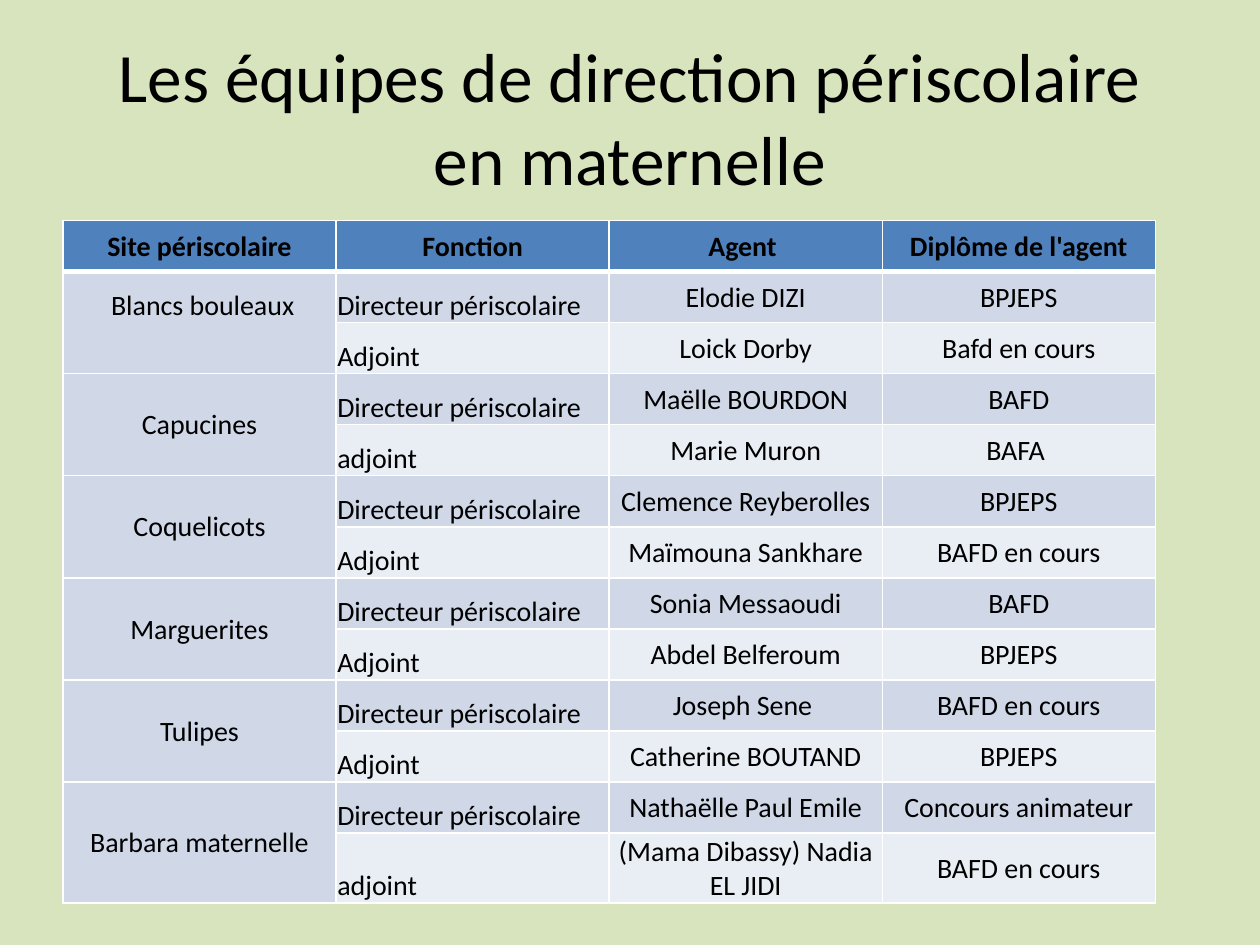
from pptx import Presentation
from pptx.util import Inches, Pt
from pptx.dml.color import RGBColor as RGB
from pptx.enum.text import PP_ALIGN as AL, MSO_ANCHOR as ANC
from pptx.oxml.ns import qn
from lxml.etree import SubElement as Sub

HUES = {"back": "D7E4BD", "head": "4F81BD", "odd": "D0D8E8",
        "even": "E9EDF4", "line": "FFFFFF", "text": "000000"}
HEADS = ["Site périscolaire", "Fonction", "Agent ", "Diplôme de l'agent"]
BOSS = "Directeur périscolaire"
TEAMS = [
    (" Blancs bouleaux", "Elodie DIZI", "BPJEPS",
     "Adjoint", "Loick Dorby", "Bafd en cours"),
    ("Capucines", "Maëlle BOURDON", "BAFD",
     "adjoint", "Marie Muron", "BAFA "),
    ("Coquelicots", "Clemence Reyberolles", "BPJEPS",
     "Adjoint", "Maïmouna Sankhare", "BAFD en cours"),
    ("Marguerites", "Sonia Messaoudi", "BAFD",
     "Adjoint", "Abdel Belferoum", "BPJEPS"),
    ("Tulipes", "Joseph Sene ", "BAFD en cours",
     "Adjoint", "Catherine BOUTAND", "BPJEPS"),
    ("Barbara maternelle", "Nathaëlle Paul Emile", "Concours animateur",
     "adjoint", "(Mama Dibassy) Nadia EL JIDI", "BAFD en cours"),
]


def write(frame, text, size, bold=False, align=AL.CENTER):
    para = frame.paragraphs[0]
    para.alignment = align
    run = para.add_run()
    run.text = text
    run.font.name = "Calibri"
    run.font.size = Pt(size)
    run.font.bold = bold
    run.font.color.rgb = RGB.from_string(HUES["text"])


def paint(cell, hue, row):
    props = cell._tc.get_or_add_tcPr()
    for side in "LRTB":
        thick = (row, side) in [(0, "B"), (1, "T")]
        line = Sub(props, qn("a:ln" + side), w=str(Pt(3 if thick else 1)))
        Sub(Sub(line, qn("a:solidFill")), qn("a:srgbClr"), val=HUES["line"])
    cell.fill.solid()
    cell.fill.fore_color.rgb = RGB.from_string(HUES[hue])


deck = Presentation()
deck.slide_width, deck.slide_height = Inches(10), Inches(7.5)
slide = deck.slides.add_slide(deck.slide_layouts[5])
slide.background.fill.solid()
slide.background.fill.fore_color.rgb = RGB.from_string(HUES["back"])

title = slide.shapes.title
title.left, title.top = Inches(0.5), Inches(0.3)
title.width, title.height = Inches(9), Inches(1.25)
title.text_frame.vertical_anchor = ANC.MIDDLE
write(title.text_frame, "Les équipes de direction périscolaire en maternelle", 39.6)

rows = [HEADS]
for site, lead, grade, role, aide, level in TEAMS:
    rows += [[site, BOSS, lead, grade], ["", role, aide, level]]

table = slide.shapes.add_table(len(rows), len(HEADS), Inches(0.5), Inches(1.75),
                               Inches(8.67), Inches(5.27)).table
for r, words in enumerate(rows):
    for c, word in enumerate(words):
        cell = table.cell(r, c)
        hue = "head" if r == 0 else "odd" if r % 2 or c == 0 else "even"
        paint(cell, hue, r)
        cell.margin_left = cell.margin_right = cell.margin_top = Inches(0.01)
        cell.margin_bottom = 0
        role = r > 0 and c == 1
        cell.vertical_anchor = ANC.BOTTOM if role else ANC.MIDDLE
        if word:
            write(cell.text_frame, word, 16, r == 0, AL.LEFT if role else AL.CENTER)

for r in range(1, len(rows), 2):
    table.cell(r, 0).merge(table.cell(r + 1, 0))
table.cell(1, 0).margin_bottom = Inches(0.28)

deck.save("out.pptx")
